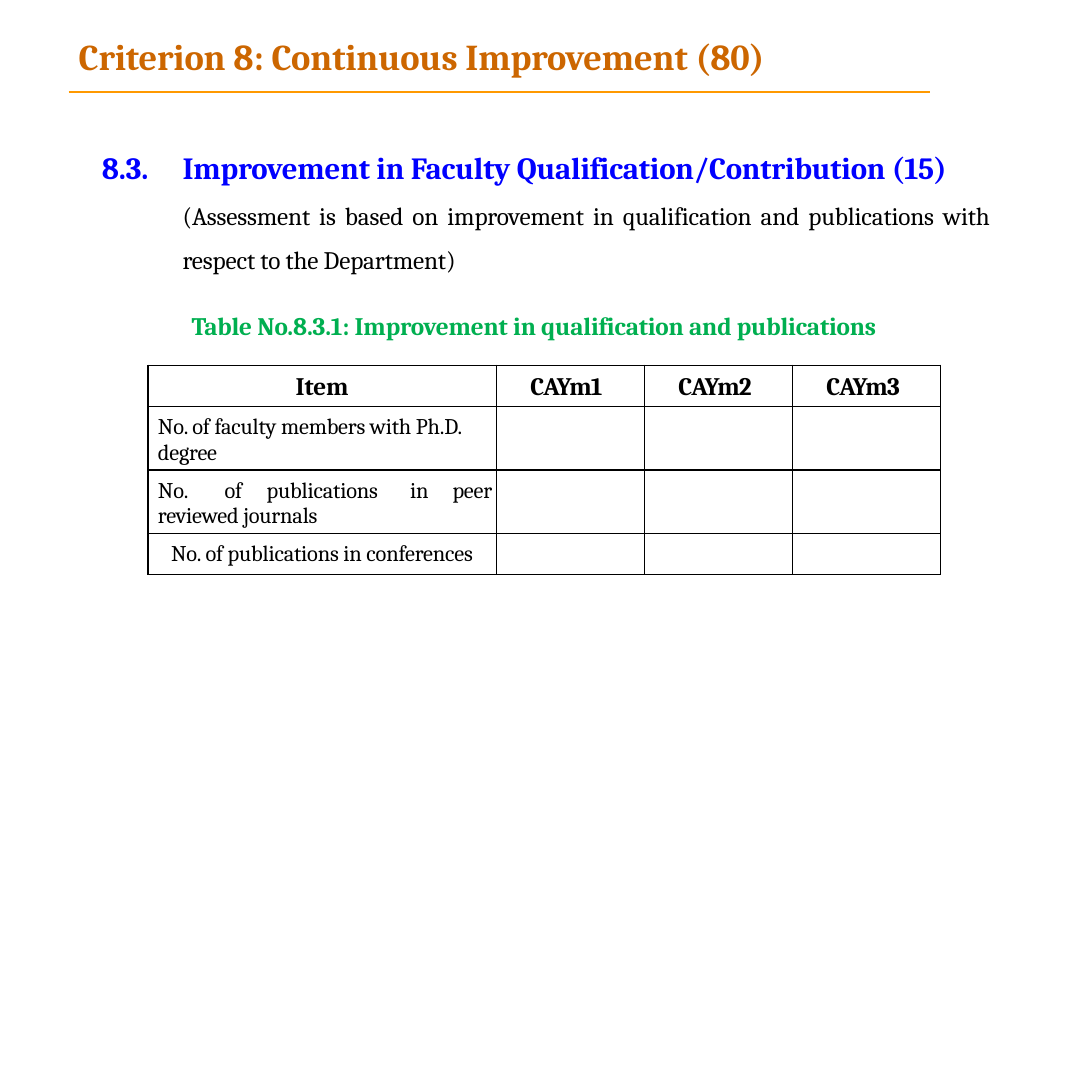
from dataclasses import dataclass

from lxml.etree import SubElement
from pptx import Presentation
from pptx.dml.color import RGBColor
from pptx.enum.shapes import MSO_CONNECTOR
from pptx.enum.text import MSO_ANCHOR, PP_ALIGN
from pptx.oxml.ns import qn
from pptx.util import Cm, Pt

TITLE = "Criterion 8: Continuous Improvement (80)"
HEADING = "8.3.\tImprovement in Faculty Qualification/Contribution (15)"
BASIS = ("(Assessment is based on improvement in qualification and publications "
         "with respect to the Department)")
CAPTION = "Table No.8.3.1: Improvement in qualification and publications"
COLUMNS = ["Item", "CAYm1", "CAYm2", "CAYm3"]
ITEMS = [
    "No. of faculty members with Ph.D. degree",
    "No.\tof\tpublications\tin\tpeer reviewed journals",
    "No. of publications in conferences",
]
ITEM_TABS = [Cm(1.68), Cm(2.74), Cm(6.35), Cm(7.42)]
COLUMN_WIDTHS = [Cm(8.77)] + [Cm(3.73)] * 3
ROW_HEIGHTS = [Cm(1.04), Cm(1.6), Cm(1.6), Cm(1.04)]


@dataclass(frozen=True)
class Theme:
    font: str = "Cambria"
    title: str = "CC6600"
    rule: str = "FF9900"
    heading: str = "0000FF"
    caption: str = "00AF50"
    text: str = "000000"
    title_size: int = 26
    heading_size: int = 22
    body_size: int = 18
    item_size: int = 16


THEME = Theme()


def style(paragraph, size, color, bold=False, tracking=-0.1):
    """Set the paragraph's font; tracking is the letter spacing in points."""
    font = paragraph.font
    font.name, font.size, font.bold = THEME.font, Pt(size), bold
    font.color.rgb = RGBColor.from_string(color)
    for run in paragraph.runs:
        run._r.get_or_add_rPr().set("spc", str(round(tracking * 100)))


def indent(paragraph, left, first_line=0):
    properties = paragraph._p.get_or_add_pPr()
    properties.set("marL", str(left))
    properties.set("indent", str(first_line))


def add_tabs(paragraph, stops):
    tabs = SubElement(paragraph._p.get_or_add_pPr(), qn("a:tabLst"))
    for stop in stops:
        SubElement(tabs, qn("a:tab"), pos=str(stop), algn="l")


def set_margins(frame, left=0, top=0):
    frame.margin_left, frame.margin_top = left, top
    frame.margin_right = frame.margin_bottom = 0


def add_borders(cell):
    properties = cell._tc.get_or_add_tcPr()
    for position, side in enumerate(("a:lnL", "a:lnR", "a:lnT", "a:lnB")):
        line = SubElement(properties, qn(side), w=str(Pt(1)))
        properties.insert(position, line)
        fill = SubElement(line, qn("a:solidFill"))
        SubElement(fill, qn("a:srgbClr"), val=THEME.text)


def add_title(slide):
    title = slide.shapes.title
    title.left, title.top, title.width, title.height = Cm(1.98), Cm(0.82), Cm(17.88), Cm(1.17)
    frame = title.text_frame
    frame.text = TITLE
    frame.word_wrap = True
    frame.vertical_anchor = MSO_ANCHOR.TOP
    set_margins(frame, top=Cm(0.03))
    paragraph = frame.paragraphs[0]
    paragraph.alignment = PP_ALIGN.LEFT
    style(paragraph, THEME.title_size, THEME.title, bold=True)

    rule = slide.shapes.add_connector(
        MSO_CONNECTOR.STRAIGHT, Cm(1.73), Cm(2.32), Cm(23.42), Cm(2.32))
    rule.line.color.rgb = RGBColor.from_string(THEME.rule)
    rule.line.width = Pt(1.25)
    SubElement(rule._element.spPr, qn("a:effectLst"))


def add_introduction(slide):
    box = slide.shapes.add_textbox(Cm(2.54), Cm(3.22), Cm(22.4), Cm(5.4))
    frame = box.text_frame
    frame.word_wrap = True
    set_margins(frame, top=Cm(0.1))

    heading = frame.paragraphs[0]
    heading.text = HEADING
    indent(heading, Cm(2.06), Cm(-2.03))
    heading.line_spacing = 1.47
    style(heading, THEME.heading_size, THEME.heading, bold=True)

    basis = frame.add_paragraph()
    basis.text = BASIS
    indent(basis, Cm(2.06))
    basis.alignment = PP_ALIGN.JUSTIFY
    basis.line_spacing = 1.47
    style(basis, THEME.body_size, THEME.text)

    caption = frame.add_paragraph()
    caption.text = CAPTION
    indent(caption, Cm(2.29))
    caption.space_before = Pt(25)
    style(caption, THEME.body_size, THEME.caption, bold=True)


def add_improvement_table(slide):
    rows = [COLUMNS] + [[item] + [""] * (len(COLUMNS) - 1) for item in ITEMS]
    table = slide.shapes.add_table(
        len(rows), len(COLUMNS), Cm(3.73), Cm(9.2),
        sum(COLUMN_WIDTHS), sum(ROW_HEIGHTS)).table
    table.first_row = table.horz_banding = False
    for column, width in zip(table.columns, COLUMN_WIDTHS):
        column.width = width
    for row, height in zip(table.rows, ROW_HEIGHTS):
        row.height = height

    for row_index, row in enumerate(rows):
        for column_index, text in enumerate(row):
            cell = table.cell(row_index, column_index)
            cell.fill.background()
            add_borders(cell)
            cell.text = text
            is_header, is_item = row_index == 0, column_index == 0
            centered = is_item and row_index in (0, len(rows) - 1)
            left = 0 if centered else Cm(0.25) if is_item else Cm(0.86)
            set_margins(cell, left=left, top=Cm(0.2))
            paragraph = cell.text_frame.paragraphs[0]
            paragraph.alignment = PP_ALIGN.CENTER if centered else PP_ALIGN.LEFT
            if "\t" in text:
                add_tabs(paragraph, ITEM_TABS)
            style(paragraph, THEME.body_size if is_header else THEME.item_size,
                  THEME.text, bold=is_header,
                  tracking=-0.6 if is_header and not is_item else -0.1)


def main():
    presentation = Presentation()
    presentation.slide_width = presentation.slide_height = Cm(27.51)
    slide = presentation.slides.add_slide(presentation.slide_layouts[5])
    add_introduction(slide)
    add_improvement_table(slide)
    add_title(slide)
    presentation.save("out.pptx")


if __name__ == "__main__":
    main()
